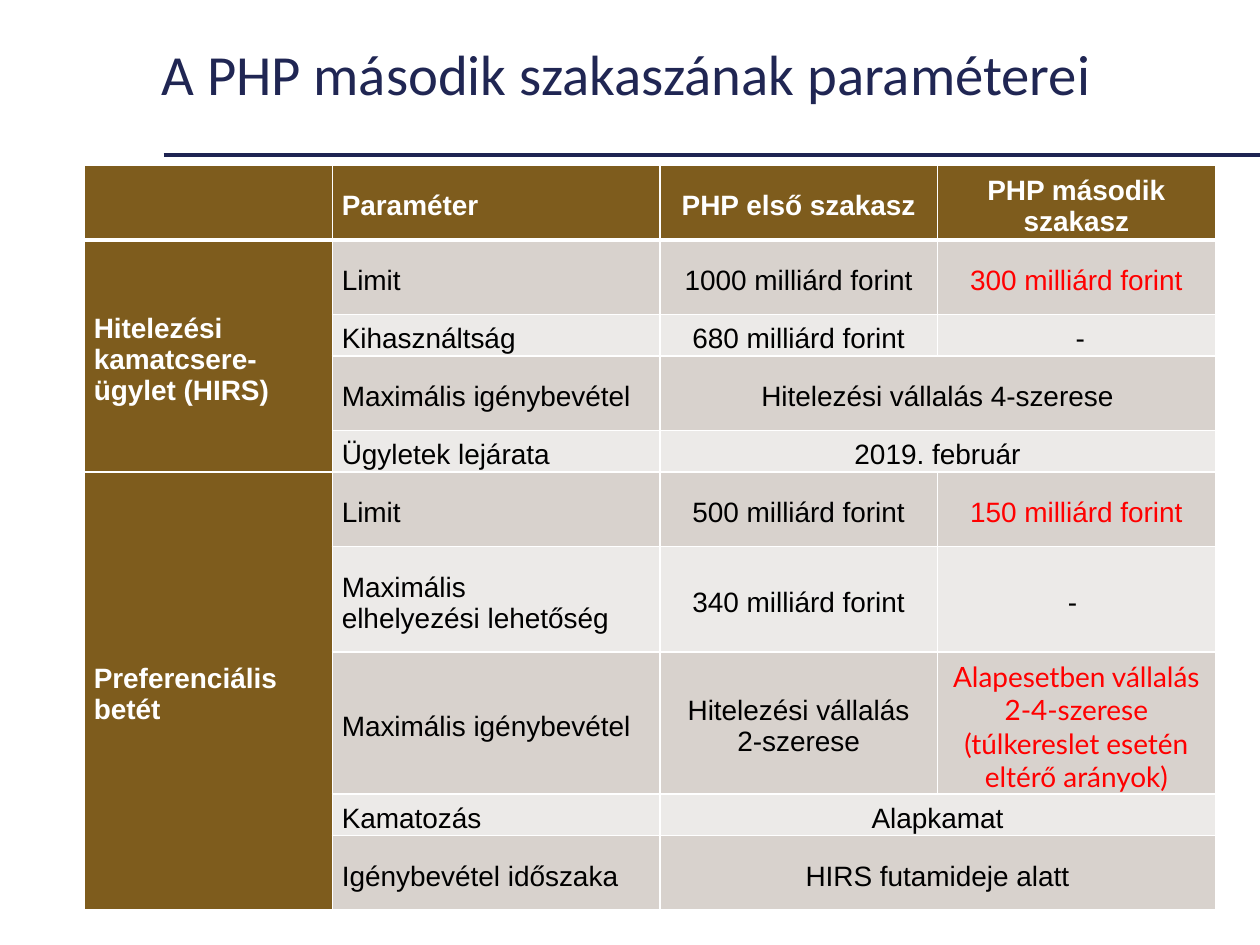
import pptx
import pptx.dml.color
import pptx.enum.shapes
import pptx.enum.text
import pptx.oxml
import pptx.oxml.ns
import pptx.util
import lxml.etree

Cm = pptx.util.Cm
Pt = pptx.util.Pt
RGBColor = pptx.dml.color.RGBColor
ALIGN = pptx.enum.text.PP_ALIGN
MIDDLE = pptx.enum.text.MSO_ANCHOR.MIDDLE

COLORS = {
    "title": "202653",
    "rule": "1E2452",
    "brown": "7E5C1D",
    "odd": "D8D2CD",
    "even": "ECEAE8",
    "white": "FFFFFF",
    "black": "000000",
    "red": "FF0000",
}


def write_text(frame, text, size=16, font="Arial", color="black", bold=False,
               align=ALIGN.LEFT, spacing=None):
    frame.word_wrap = True
    for index, line in enumerate(text.split("\n")):
        para = frame.paragraphs[0] if index == 0 else frame.add_paragraph()
        para.alignment = align
        if spacing:
            para.line_spacing = spacing
        span = para.add_run()
        span.text = line
        span.font.size = Pt(size)
        span.font.name = font
        span.font.bold = bold
        span.font.color.rgb = RGBColor.from_string(COLORS[color])


def add_border(cell, side, width):
    properties = cell._tc.get_or_add_tcPr()
    border = lxml.etree.SubElement(properties, pptx.oxml.ns.qn(f"a:ln{side}"), w=str(Pt(width)))
    fill = lxml.etree.SubElement(border, pptx.oxml.ns.qn("a:solidFill"))
    lxml.etree.SubElement(fill, pptx.oxml.ns.qn("a:srgbClr"), val=COLORS["white"])


deck = pptx.Presentation()
deck.slide_width = Cm(25.4)
deck.slide_height = Cm(19.05)
page = deck.slides.add_slide(deck.slide_layouts[5])

title = page.shapes.title
title.left, title.top, title.width, title.height = Cm(3), Cm(0.51), Cm(20.8), Cm(2.11)
title.text_frame.auto_size = pptx.enum.text.MSO_AUTO_SIZE.NONE
title.text_frame.vertical_anchor = MIDDLE
write_text(title.text_frame, "A PHP második szakaszának paraméterei",
           size=32.4, font="Calibri", color="title", spacing=0.9)

rule = page.shapes.add_connector(pptx.enum.shapes.MSO_CONNECTOR.STRAIGHT,
                                 Cm(3.3), Cm(3.12), Cm(25.4), Cm(3.12))
rule.line.color.rgb = RGBColor.from_string(COLORS["rule"])
rule.line.width = Pt(2.25)
lxml.etree.SubElement(rule._element.spPr, pptx.oxml.ns.qn("a:effectLst"))

number_box = page.shapes.add_textbox(Cm(9.86), Cm(17.65), Cm(5.72), Cm(1.02))
number_box.text_frame.vertical_anchor = MIDDLE
write_text(number_box.text_frame, "4", size=11, font="Calibri", color="title",
           align=ALIGN.CENTER)

rows = [
    ["", "Paraméter", "PHP első szakasz", "PHP második szakasz"],
    ["Hitelezési kamatcsere-ügylet (HIRS)", "Limit", "1000 milliárd forint",
     "300 milliárd forint"],
    ["", "Kihasználtság", "680 milliárd forint", " -"],
    ["", "Maximális igénybevétel", "Hitelezési vállalás 4-szerese", ""],
    ["", "Ügyletek lejárata", "2019. február", ""],
    ["Preferenciális betét", "Limit", "500 milliárd forint", "150 milliárd forint"],
    ["", "Maximális\nelhelyezési lehetőség", "340 milliárd forint", "- "],
    ["", "Maximális igénybevétel", "Hitelezési vállalás\n2-szerese",
     "Alapesetben vállalás 2-4-szerese\n(túlkereslet esetén eltérő arányok)"],
    ["", "Kamatozás", "Alapkamat", ""],
    ["", "Igénybevétel időszaka", "HIRS futamideje alatt", ""],
]
widths = [5, 6.6, 5.6, 5.6]
heights = [1.4, 1.5, 0.84, 1.5, 0.84, 1.5, 2.13, 2.84, 0.84, 1.5]
red_cells = {(1, 3), (5, 3), (7, 3)}
lato_cells = {(7, 3)}

table = page.shapes.add_table(len(rows), len(widths), Cm(1.7), Cm(3.33),
                              Cm(sum(widths)), Cm(sum(heights))).table
for column, width in zip(table.columns, widths):
    column.width = Cm(width)
for row, height in zip(table.rows, heights):
    row.height = Cm(height)

for r, texts in enumerate(rows):
    for c, text in enumerate(texts):
        cell = table.cell(r, c)
        heading = r == 0 or c == 0
        for side in "LRTB":
            under_header = (r, side) in {(0, "B"), (1, "T")}
            add_border(cell, side, 3 if under_header else 1)
        background = "brown" if heading else "odd" if r % 2 else "even"
        cell.fill.solid()
        cell.fill.fore_color.rgb = RGBColor.from_string(COLORS[background])
        cell.vertical_anchor = MIDDLE
        cell.margin_left = cell.margin_right = Cm(0.19)
        cell.margin_top, cell.margin_bottom = Cm(0.15), 0
        if text:
            color = "white" if heading else "red" if (r, c) in red_cells else "black"
            write_text(cell.text_frame, text, color=color, bold=heading,
                       font="Lato" if (r, c) in lato_cells else "Arial",
                       align=ALIGN.CENTER if c > 1 else ALIGN.LEFT)

for first, last in [(1, 4), (5, 9)]:
    table.cell(first, 0).merge(table.cell(last, 0))
for r in [3, 4, 8, 9]:
    table.cell(r, 2).merge(table.cell(r, 3))

deck.save("out.pptx")
